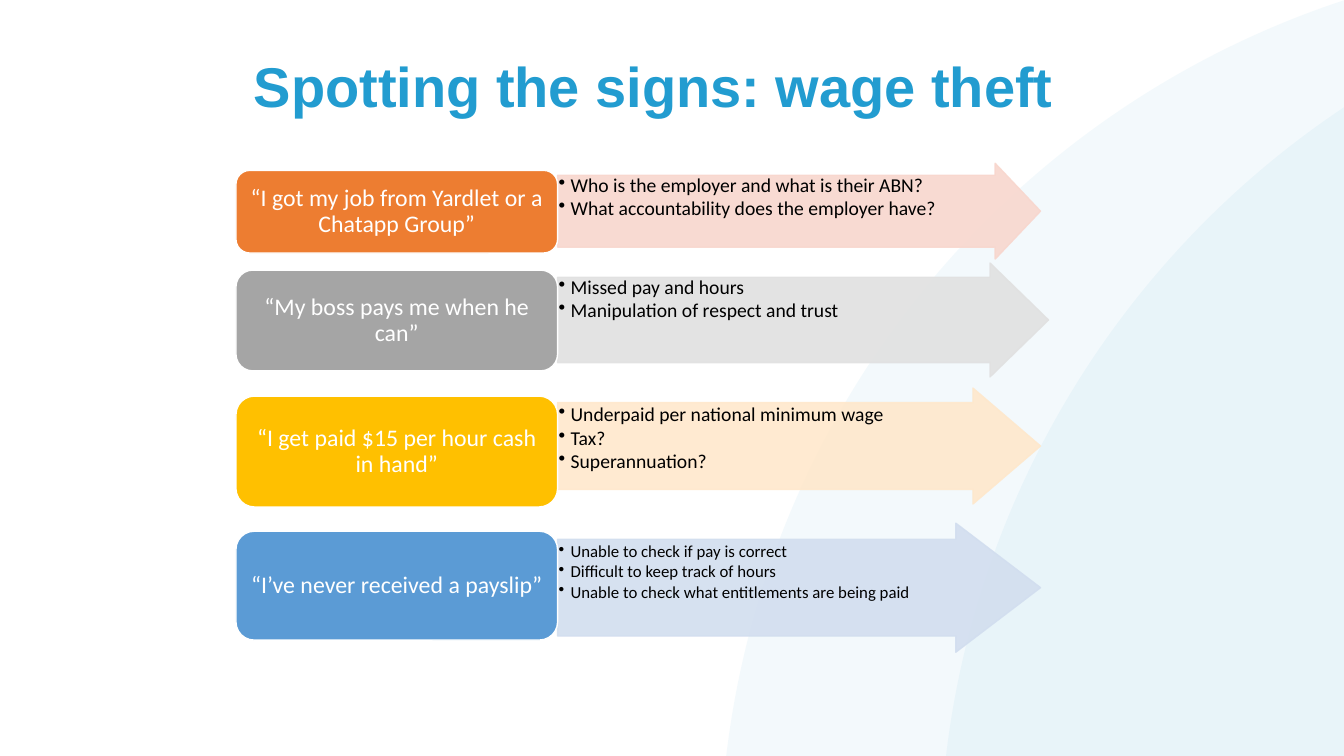
from dataclasses import dataclass

from lxml.etree import SubElement
from pptx import Presentation
from pptx.dml.color import RGBColor
from pptx.enum.shapes import MSO_SHAPE
from pptx.enum.text import MSO_ANCHOR, PP_ALIGN
from pptx.oxml.ns import qn
from pptx.shapes.autoshape import Shape
from pptx.slide import Slide
from pptx.util import Inches, Pt

COLORS = {
    "brand": "229CD0", "white": "FFFFFF", "black": "000000",
    "orange": "ED7D31", "orange_tint": "F8D7CE",
    "gray": "A5A5A5", "gray_tint": "E1E1E1",
    "gold": "FFC000", "gold_tint": "FFE8CC",
    "blue": "5B9BD5", "blue_tint": "D2DEEF",
}
BOX_LEFT, BOX_W = 2.34, 3.19
ARROW_LEFT = BOX_LEFT + BOX_W
SHAFT = 0.75  # shaft height as a share of the arrow height


@dataclass
class Sign:
    quote: str
    clues: list[str]
    color: str
    box_top: float
    box_h: float
    arrow_top: float
    arrow_w: float
    arrow_h: float
    head: float
    pad: float = 0
    size: float = 14


SIGNS = [
    Sign("“I got my job from Yardlet or a Chatapp Group”",
         ["Who is the employer and what is their ABN?",
          "What accountability does the employer have?"],
         "orange", 1.69, 0.82, 1.62, 4.79, 0.95, 0.45),
    Sign("“My boss pays me when he can”",
         ["Missed pay and hours", "Manipulation of respect and trust"],
         "gray", 2.68, 1, 2.61, 4.87, 1.13, 0.58),
    Sign("“I get paid $15 per hour cash in hand”",
         ["Underpaid per national minimum wage", "Tax?", "Superannuation?"],
         "gold", 3.93, 1.1, 3.85, 4.79, 1.15, 0.67, pad=0.02),
    Sign("“I’ve never received a payslip”",
         ["Unable to check if pay is correct", "Difficult to keep track of hours",
          "Unable to check what entitlements are being paid"],
         "blue", 5.27, 1.08, 5.19, 4.79, 1.28, 0.84, pad=0.04, size=12),
]


def rgb(name: str) -> RGBColor:
    return RGBColor.from_string(COLORS[name])


def set_alpha(shape: Shape, percent: int) -> None:
    """Apply the opacity to the fill and, if it has one, the line."""
    for clr in shape.element.spPr.iter(qn("a:srgbClr")):
        SubElement(clr, qn("a:alpha"), val=str(percent * 1000))


def add_shape(s: Slide, kind: MSO_SHAPE, left: float, top: float, width: float,
              height: float, fill: str, line: str | None = None) -> Shape:
    sp = s.shapes.add_shape(kind, Inches(left), Inches(top), Inches(width), Inches(height))
    sp.shadow.inherit = False
    sp.fill.solid()
    sp.fill.fore_color.rgb = rgb(fill)
    if line:
        sp.line.color.rgb = rgb(line)
        sp.line.width = Pt(1)
    else:
        sp.line.fill.background()
    return sp


def add_bullet(p) -> None:
    pPr = p._p.get_or_add_pPr()
    pPr.set("marL", str(Inches(0.12)))
    pPr.set("indent", str(-Inches(0.12)))
    SubElement(pPr, qn("a:buChar"), char="•")


def set_text(sp: Shape, lines: list[str], *, size: float, color: str, font: str = "Calibri",
             bold: bool = False, align: PP_ALIGN = PP_ALIGN.CENTER,
             anchor: MSO_ANCHOR = MSO_ANCHOR.MIDDLE, bullets: bool = False,
             after: float = 0, margins: tuple = (0, 0, 0, 0)) -> None:
    """Fill the shape with paragraphs; margins are left, top, right, bottom."""
    tf = sp.text_frame
    tf.word_wrap = True
    tf.vertical_anchor = anchor
    tf.margin_left, tf.margin_top, tf.margin_right, tf.margin_bottom = map(Inches, margins)
    for i, line in enumerate(lines):
        p = tf.add_paragraph() if i else tf.paragraphs[0]
        if bullets:
            add_bullet(p)
        p.alignment = align
        p.line_spacing = 0.9
        p.space_after = Pt(after)
        r = p.add_run()
        r.text = line
        r.font.name, r.font.size, r.font.bold = font, Pt(size), bold
        r.font.color.rgb = rgb(color)


def draw_sign(s: Slide, sign: Sign) -> None:
    tint = f"{sign.color}_tint"
    arrow = add_shape(s, MSO_SHAPE.RIGHT_ARROW, ARROW_LEFT, sign.arrow_top,
                      sign.arrow_w, sign.arrow_h, tint, tint)
    arrow.adjustments[0] = SHAFT
    arrow.adjustments[1] = sign.head / sign.arrow_h
    set_alpha(arrow, 90)
    set_text(arrow, sign.clues, size=sign.size, color="black", align=PP_ALIGN.LEFT,
             anchor=MSO_ANCHOR.TOP, bullets=True, after=round(sign.size * 0.12, 1),
             margins=(0.01, sign.pad, 0, 0))

    box = add_shape(s, MSO_SHAPE.ROUNDED_RECTANGLE, BOX_LEFT, sign.box_top,
                    BOX_W, sign.box_h, sign.color, "white")
    set_text(box, [sign.quote], size=17, color="white", margins=(0.06, 0.04, 0.06, 0.04))


def main() -> None:
    prs = Presentation()
    prs.slide_width, prs.slide_height = Inches(13.33), Inches(7.5)
    s = prs.slides.add_slide(prs.slide_layouts[6])

    for left in (7.14, 9.32):
        set_alpha(add_shape(s, MSO_SHAPE.OVAL, left, -0.45, 18.02, 18.02, "brand"), 5)

    title = s.shapes.add_textbox(Inches(2.23), Inches(0.61), Inches(8.5), Inches(0.55))
    set_text(title, ["Spotting the signs: wage theft"], size=40, color="brand",
             font="Arial", bold=True)

    for sign in SIGNS:
        draw_sign(s, sign)

    prs.save("out.pptx")


if __name__ == "__main__":
    main()
